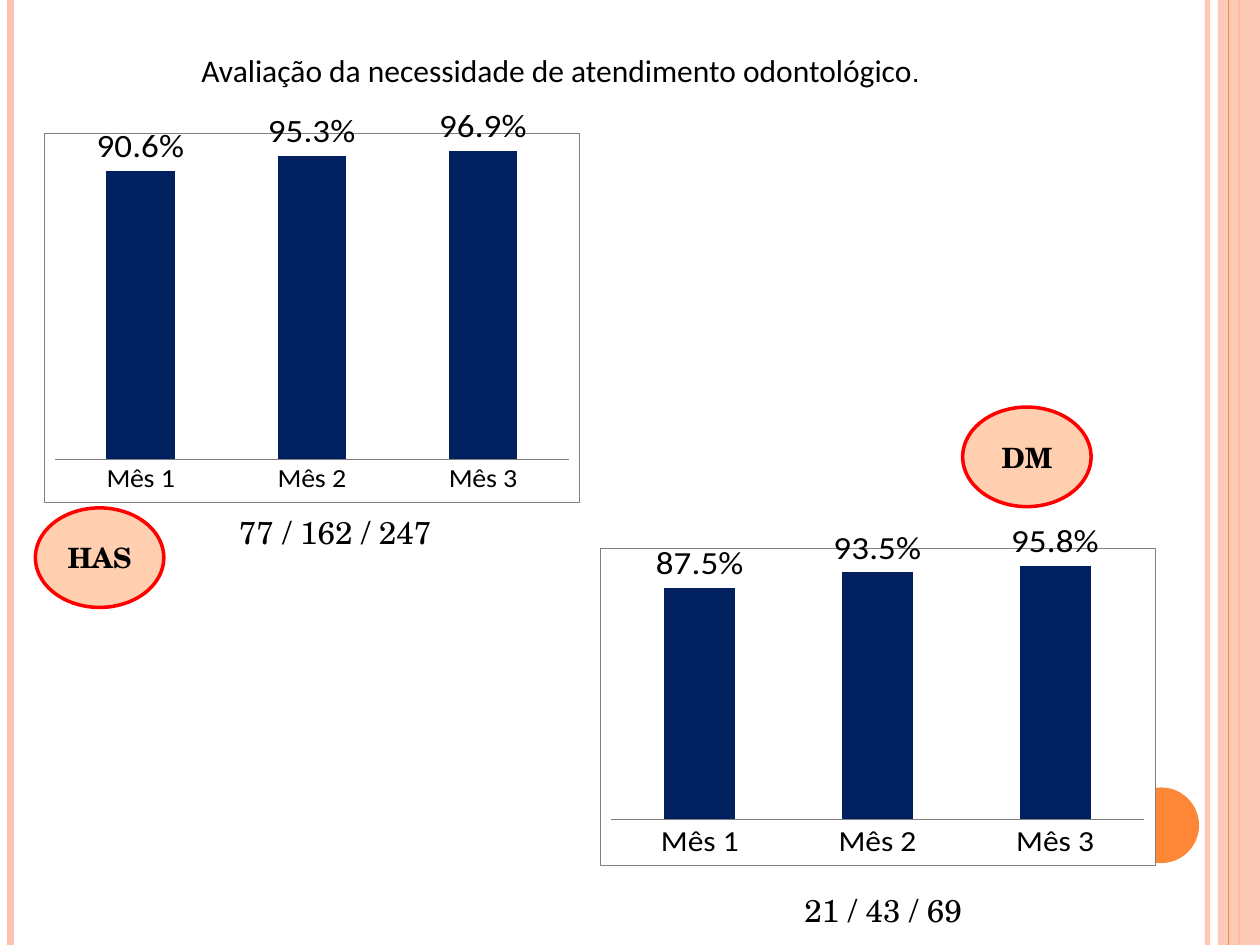
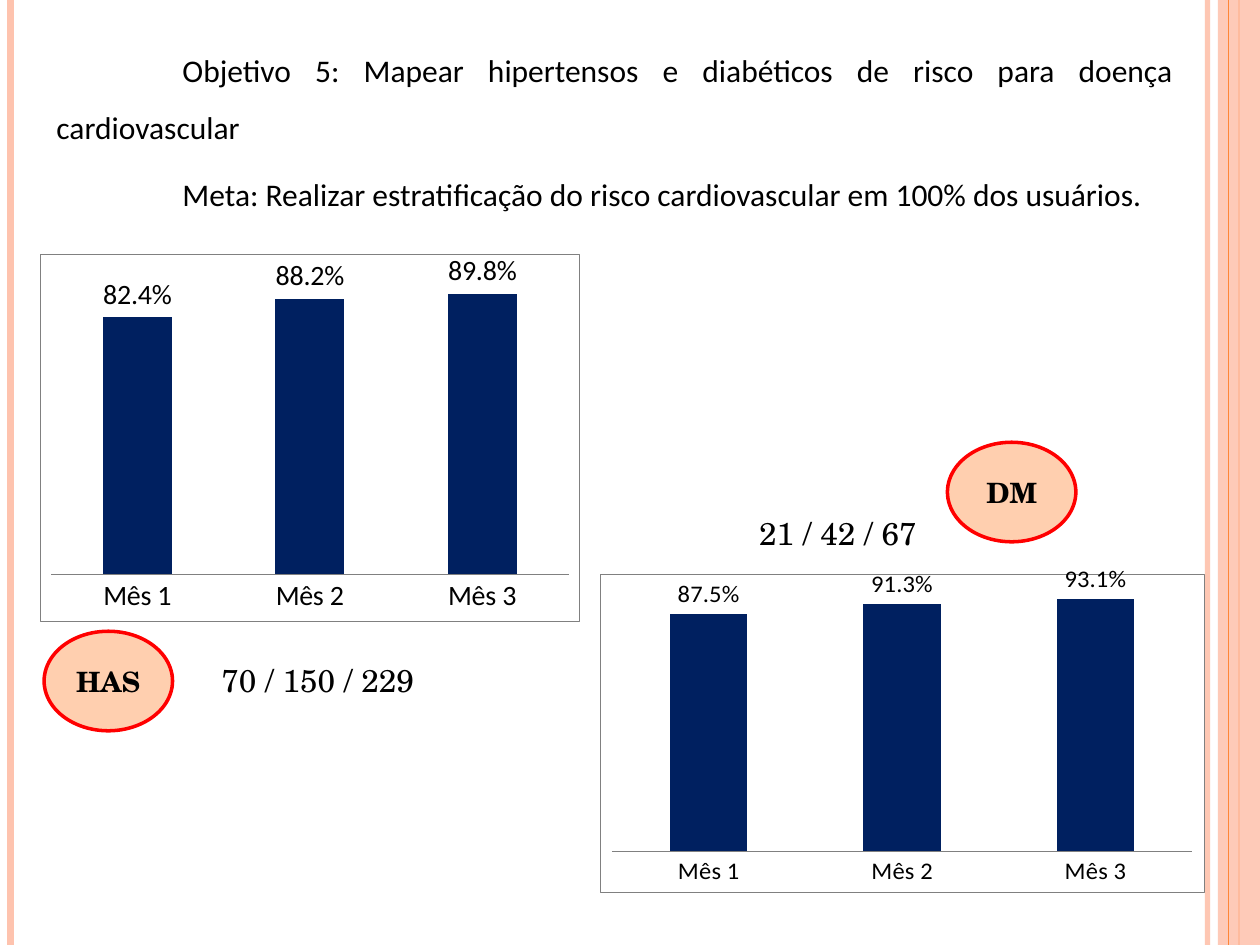
from dataclasses import dataclass

from lxml import etree
from pptx import Presentation
from pptx.chart import data as chart_data
from pptx.dml.color import RGBColor
from pptx.enum import chart as chart_enum, shapes, text
from pptx.oxml import ns
from pptx.util import Pt


@dataclass(frozen=True)
class Theme:
    white: str = "FFFFFF"
    ink: str = "000000"
    peach: str = "FEC3AE"
    orange: str = "FE8637"
    badge_fill: str = "FFCFAF"
    badge_line: str = "FF0000"
    bar: str = "002060"
    axis: str = "808080"
    sans: str = "Calibri"
    serif: str = "TeX Gyre Schola"
    heading_size: float = 18
    full_stop_font: str = "Arial"
    full_stop_size: float = 16
    count_size: float = 18
    badge_size: float = 16
    chart_size: float = 10


@dataclass(frozen=True)
class Panel:
    """One patient group: its chart, its round badge and its monthly counts."""
    group: str
    chart_box: tuple
    badge_at: tuple
    counts_at: tuple
    counts: str
    rates: tuple
    month_size: float
    label_size: float


THEME = Theme()
WIDTH, HEIGHT = 720, 540
BADGE = (73.4, 56.9)
COUNTS = (164.2, 28.8)
MONTHS = ["Mês 1", "Mês 2", "Mês 3"]
PERCENT = "0.0%"

NEED_HEADING = [[
    ("Avaliação da necessidade de atendimento odontológico", THEME.sans, THEME.heading_size),
    (".", THEME.full_stop_font, THEME.full_stop_size),
]]
RISK_HEADING = [
    [("Objetivo 5: Mapear hipertensos e diabéticos de risco para doença cardiovascular",
      THEME.sans, THEME.heading_size)],
    [("Meta: Realizar estratificação do risco cardiovascular em 100% dos usuários.",
      THEME.sans, THEME.heading_size)],
]
SLIDES = [
    ((36, 15.1, 588.2, 494.6), NEED_HEADING, [
        Panel("HAS", (25.2, 60.5, 306, 226.8), (20.2, 290.2), (109.4, 289.4),
              "77 / 162 / 247", (0.906, 0.953, 0.969), 16, 20),
        Panel("DM", (342.7, 298, 317.5, 196.6), (550.1, 232.6), (422.6, 505.4),
              "21 / 43 / 69", (0.875, 0.935, 0.958), 18, 20),
    ]),
    ((25.2, 15.1, 652.3, 494.6), RISK_HEADING, [
        Panel("HAS", (23, 145.4, 308.2, 209.5), (25.2, 360.7), (99.4, 374.4),
              "70 / 150 / 229", (0.824, 0.882, 0.898), 16, 16),
        Panel("DM", (342.7, 322.6, 345.6, 187.2), (541.4, 252.7), (396.7, 290.2),
              "21 / 42 / 67", (0.875, 0.913, 0.931), 14, 14),
    ]),
]


def rgb(code):
    return RGBColor.from_string(code)


def points(box):
    return [Pt(length) for length in box]


def set_font(font, name, size, bold=False):
    font.name, font.size, font.bold = name, Pt(size), bold
    font.color.rgb = rgb(THEME.ink)


def add_span(para, words, name, size, bold=False):
    span = para.add_run()
    span.text = words
    set_font(span.font, name, size, bold)


def set_opacity(drawn, percent):
    for color in drawn._element.spPr.iter(ns.qn("a:srgbClr")):
        etree.SubElement(color, ns.qn("a:alpha")).set("val", str(percent * 1000))


def add_rule(page, x, color, weight):
    """Draw a vertical line over the whole page height."""
    rule = page.shapes.add_connector(
        shapes.MSO_CONNECTOR.STRAIGHT, *points((x, 0, x, HEIGHT)))
    rule.line.color.rgb = rgb(color)
    rule.line.width = Pt(weight)
    etree.SubElement(rule._element.spPr, ns.qn("a:effectLst"))
    return rule


def add_filled(page, kind, box, fill):
    shape = page.shapes.add_shape(kind, *points(box))
    shape.shadow.inherit = False
    shape.fill.solid()
    shape.fill.fore_color.rgb = rgb(fill)
    shape.line.fill.background()
    return shape


def add_frame(page):
    """Draw the side bands and the orange disc shared by all pages."""
    set_opacity(add_rule(page, 690, THEME.peach, 3), 93)
    add_rule(page, 6, THEME.peach, 4.5)
    add_rule(page, 708, THEME.orange, 1.5)
    band = add_filled(page, shapes.MSO_SHAPE.RECTANGLE,
                      (696, 0, WIDTH - 696, HEIGHT), THEME.peach)
    set_opacity(band, 87)
    add_rule(page, 702, THEME.orange, 0.75)
    add_filled(page, shapes.MSO_SHAPE.OVAL, (642, 450, 43.2, 43.2), THEME.orange)


def add_heading(page, box, paragraphs):
    frame = page.shapes.add_textbox(*points(box)).text_frame
    frame.word_wrap = True
    for index, spans in enumerate(paragraphs):
        para = frame.add_paragraph() if index else frame.paragraphs[0]
        para.alignment = text.PP_ALIGN.JUSTIFY
        para.line_spacing = 1.5
        para.space_before = Pt(6)
        properties = para._p.get_or_add_pPr()
        properties.set("marL", "0")
        properties.set("indent", str(Pt(72)))
        for span in spans:
            add_span(para, *span)


def area_format(border=None):
    """Return chart XML for a white area, with a thin border if a colour is given."""
    line = (f'<a:ln w="{Pt(0.25)}"><a:solidFill><a:srgbClr val="{border}"/></a:solidFill></a:ln>'
            if border else "<a:ln><a:noFill/></a:ln>")
    return etree.fromstring(
        f'<c:spPr {ns.nsdecls("c", "a")}><a:solidFill><a:srgbClr val="{THEME.white}"/>'
        f"</a:solidFill>{line}</c:spPr>")


def add_rate_chart(page, panel):
    rates = chart_data.CategoryChartData(number_format=PERCENT)
    rates.categories = MONTHS
    rates.add_series("Series 1", panel.rates)
    chart = page.shapes.add_chart(
        chart_enum.XL_CHART_TYPE.COLUMN_CLUSTERED, *points(panel.chart_box), rates).chart
    chart.has_title = chart.has_legend = False
    set_font(chart.font, THEME.sans, THEME.chart_size)

    months = chart.category_axis
    months.major_tick_mark = chart_enum.XL_TICK_MARK.NONE
    months.format.line.color.rgb = rgb(THEME.axis)
    months.format.line.width = Pt(0.25)
    set_font(months.tick_labels.font, THEME.sans, panel.month_size)

    scale = chart.value_axis
    scale.minimum_scale, scale.maximum_scale, scale.major_unit = 0, 1, 0.1
    scale.has_major_gridlines = False
    scale.tick_labels.number_format = PERCENT
    scale.tick_labels.number_format_is_linked = False
    scale.visible = False

    plot = chart.plots[0]
    plot.gap_width, plot.overlap, plot.vary_by_categories = 150, -25, False
    bars = plot.series[0].format.fill
    bars.solid()
    bars.fore_color.rgb = rgb(THEME.bar)
    labels = plot.series[0].data_labels
    labels.show_value = True
    labels.position = chart_enum.XL_LABEL_POSITION.OUTSIDE_END
    labels.number_format, labels.number_format_is_linked = PERCENT, False
    set_font(labels.font, THEME.sans, panel.label_size)

    body = chart._chartSpace.find(ns.qn("c:chart"))
    body.find(ns.qn("c:plotArea")).append(area_format())
    body.addnext(area_format(THEME.axis))


def add_badge(page, panel):
    badge = add_filled(page, shapes.MSO_SHAPE.OVAL, panel.badge_at + BADGE, THEME.badge_fill)
    badge.line.color.rgb = rgb(THEME.badge_line)
    badge.line.width = Pt(2)
    frame = badge.text_frame
    frame.vertical_anchor = text.MSO_ANCHOR.MIDDLE
    para = frame.paragraphs[0]
    para.alignment = text.PP_ALIGN.CENTER
    add_span(para, panel.group, THEME.serif, THEME.badge_size, bold=True)


def add_counts(page, panel):
    frame = page.shapes.add_textbox(*points(panel.counts_at + COUNTS)).text_frame
    frame.word_wrap = True
    frame.auto_size = text.MSO_AUTO_SIZE.SHAPE_TO_FIT_TEXT
    para = frame.paragraphs[0]
    para.alignment = text.PP_ALIGN.CENTER
    add_span(para, panel.counts, THEME.serif, THEME.count_size)


def add_page(deck, heading_box, heading, panels):
    page = deck.slides.add_slide(deck.slide_layouts[6])
    add_frame(page)
    add_heading(page, heading_box, heading)
    for add_part in (add_rate_chart, add_badge, add_counts):
        for panel in panels:
            add_part(page, panel)


def main():
    deck = Presentation()
    deck.slide_width, deck.slide_height = Pt(WIDTH), Pt(HEIGHT)
    for content in SLIDES:
        add_page(deck, *content)
    deck.save("out.pptx")


if __name__ == "__main__":
    main()
